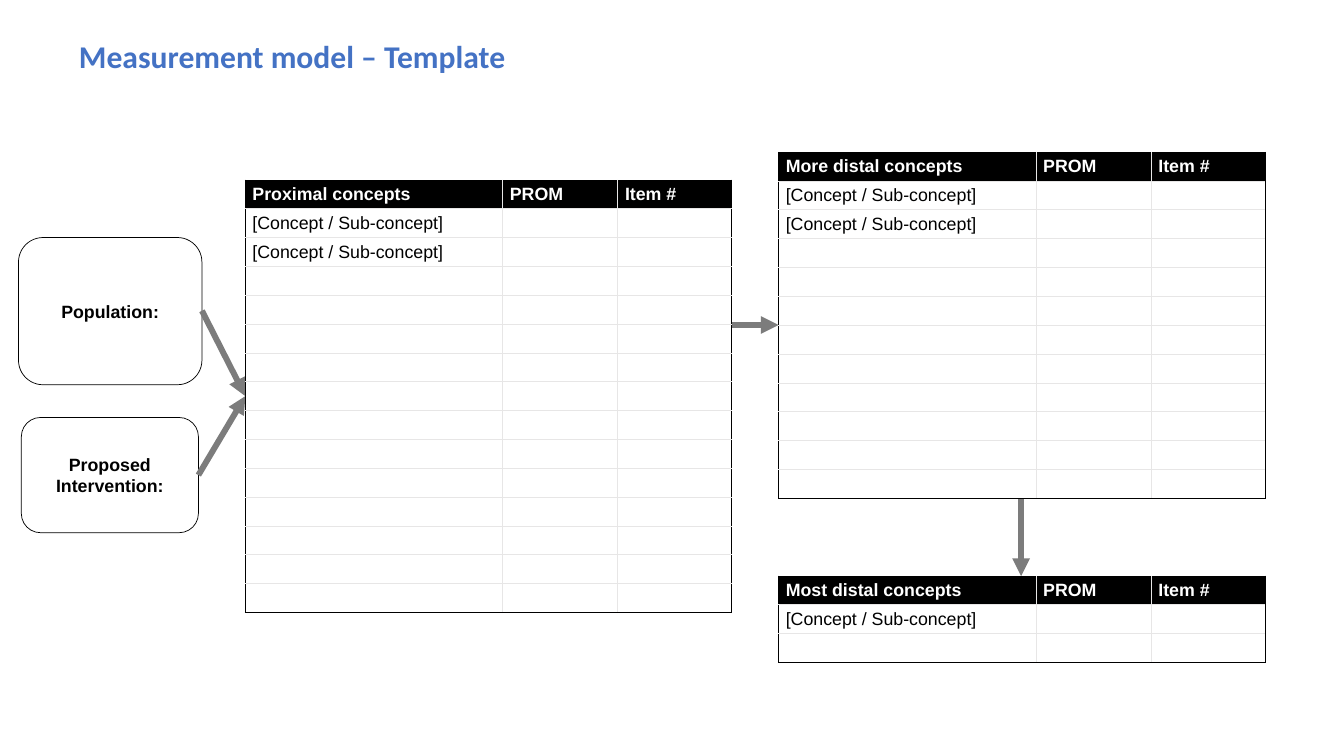
import pptx
import pptx.util
import pptx.dml.color
import pptx.enum.shapes
import pptx.enum.text
import pptx.oxml
import pptx.oxml.ns
import lxml.etree

Inches = pptx.util.Inches
Pt = pptx.util.Pt
RGBColor = pptx.dml.color.RGBColor
PP_ALIGN = pptx.enum.text.PP_ALIGN
MIDDLE = pptx.enum.text.MSO_ANCHOR.MIDDLE
qn = pptx.oxml.ns.qn

BLACK = RGBColor(0x00, 0x00, 0x00)
WHITE = RGBColor(0xFF, 0xFF, 0xFF)
GRID = RGBColor(0xE7, 0xE6, 0xE6)
ARROW = RGBColor(0x7C, 0x7C, 0x7C)
BLUE = RGBColor(0x44, 0x72, 0xC4)


def write(tf, text, size=18, font="Arial", color=BLACK, bold=False, align=PP_ALIGN.LEFT):
    p = tf.paragraphs[0]
    p.alignment = align
    r = p.add_run()
    r.text = text
    r.font.size = Pt(size)
    r.font.name = font
    r.font.bold = bold
    r.font.color.rgb = color
    return p


def set_borders(cell, left, right, top, bottom):
    sides = zip(("L", "R", "T", "B"), (left, right, top, bottom))
    for i, (side, color) in enumerate(sides):
        ln = pptx.oxml.parse_xml(
            f'<a:ln{side} {pptx.oxml.ns.nsdecls("a")} w="12700"><a:solidFill>'
            f'<a:srgbClr val="{color}"/></a:solidFill></a:ln{side}>')
        cell._tc.get_or_add_tcPr().insert(i, ln)


prs = pptx.Presentation()
prs.slide_width = Inches(18.9)
prs.slide_height = Inches(10.63)
s = prs.slides.add_slide(prs.slide_layouts[5])

title = s.shapes.title
title.left, title.top = Inches(1.01), Inches(0.39)
title.width, title.height = Inches(16.01), Inches(0.72)
title.text_frame.vertical_anchor = pptx.enum.text.MSO_ANCHOR.BOTTOM
p = write(title.text_frame, "Measurement model – Template",
          size=32, font="Calibri", color=BLUE, bold=True)
p.line_spacing = 0.9

boxes = [
    ("Proposed Intervention:", 0.3, 5.87, 2.49, 1.62),
    ("Population:", 0.26, 3.34, 2.58, 2.07),
]
for text, x, y, w, h in boxes:
    sp = s.shapes.add_shape(pptx.enum.shapes.MSO_SHAPE.ROUNDED_RECTANGLE,
                            Inches(x), Inches(y), Inches(w), Inches(h))
    sp.shadow.inherit = False
    sp.fill.background()
    sp.line.color.rgb = BLACK
    sp.line.width = Pt(0.75)
    tf = sp.text_frame
    tf.word_wrap = True
    tf.vertical_anchor = MIDDLE
    write(tf, text, bold=True, align=PP_ALIGN.CENTER)

arrows = [
    (2.84, 4.37, 3.45, 5.57),
    (2.79, 6.68, 3.45, 5.57),
    (10.29, 4.57, 10.95, 4.57),
    (14.36, 7.01, 14.36, 8.1),
]
for x1, y1, x2, y2 in arrows:
    arrow = s.shapes.add_connector(pptx.enum.shapes.MSO_CONNECTOR.STRAIGHT,
                                   Inches(x1), Inches(y1), Inches(x2), Inches(y2))
    arrow.line.color.rgb = ARROW
    arrow.line.width = Pt(6)
    lxml.etree.SubElement(arrow.line._get_or_add_ln(), qn("a:tailEnd"), type="triangle")
    lxml.etree.SubElement(arrow._element.spPr, qn("a:effectLst"))

COLUMNS = (3.62, 1.62, 1.6)
tables = [
    ("Proximal concepts", 3.45, 2.53, 15, 2, 6.08),
    ("More distal concepts", 10.95, 2.14, 12, 2, 4.87),
    ("Most distal concepts", 10.95, 8.1, 3, 1, 1.21),
]
for heading, x, y, rows, concepts, height in tables:
    frame = s.shapes.add_table(rows, len(COLUMNS), Inches(x), Inches(y),
                               Inches(sum(COLUMNS)), Inches(height))
    table = frame.table
    for column, width in zip(table.columns, COLUMNS):
        column.width = Inches(width)
    labels = [(heading, "PROM", "Item #")]
    labels += [("[Concept / Sub-concept]", "", "")] * concepts
    labels += [("", "", "")] * (rows - 1 - concepts)
    for i, row in enumerate(table.rows):
        header = i == 0
        for j, cell in enumerate(row.cells):
            cell.vertical_anchor = MIDDLE
            if header:
                cell.fill.solid()
                cell.fill.fore_color.rgb = BLACK
            else:
                cell.fill.background()
            set_borders(cell,
                        left=BLACK if j == 0 else GRID,
                        right=BLACK if j == len(COLUMNS) - 1 else GRID,
                        top=BLACK if header else GRID,
                        bottom=BLACK if i == rows - 1 else GRID)
            if labels[i][j]:
                write(cell.text_frame, labels[i][j],
                      color=WHITE if header else BLACK, bold=header)

prs.save("out.pptx")
